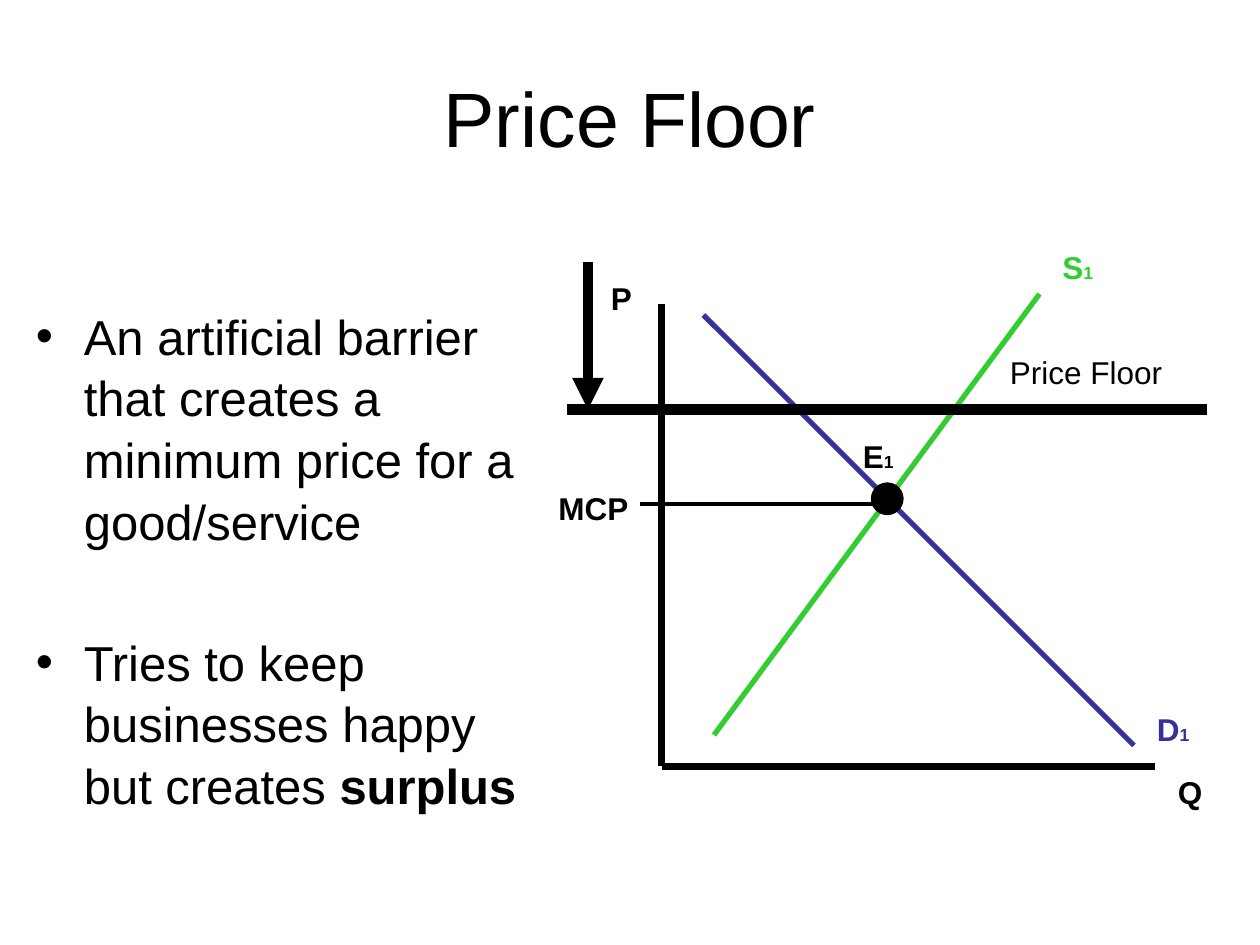
"""Build the price floor slide: two bullet points beside a supply and demand diagram."""
from dataclasses import dataclass

from lxml.etree import SubElement
from pptx import Presentation
from pptx.dml.color import RGBColor
from pptx.enum.shapes import MSO_CONNECTOR, MSO_SHAPE
from pptx.enum.text import MSO_ANCHOR, PP_ALIGN
from pptx.oxml.ns import qn
from pptx.util import Inches, Pt


@dataclass(frozen=True)
class Theme:
    font: str = "Arial"
    ink: RGBColor = RGBColor(0x00, 0x00, 0x00)
    demand: RGBColor = RGBColor(0x33, 0x33, 0x99)
    supply: RGBColor = RGBColor(0x33, 0xCC, 0x33)
    title: int = 44
    body: int = 28
    label: int = 18
    subscript: int = 10


theme = Theme()
deck = Presentation()
deck.slide_width, deck.slide_height = Inches(10), Inches(7.5)
slide = deck.slides.add_slide(deck.slide_layouts[6])
COLUMN, ROW = deck.slide_width / 120, deck.slide_height / 90


def place(left, top, width, height):
    return [round(n * unit) for n, unit in zip((left, top, width, height), (COLUMN, ROW) * 2)]


def style(paragraph, size, color, bold=None):
    font = paragraph.font
    font.name, font.size, font.bold = theme.font, Pt(size), bold
    font.color.rgb = color


heading = slide.shapes.add_textbox(*place(6, 3.6, 108, 15)).text_frame
heading.word_wrap = True
heading.vertical_anchor = MSO_ANCHOR.MIDDLE
heading.text = "Price Floor"
heading.paragraphs[0].alignment = PP_ALIGN.CENTER
style(heading.paragraphs[0], theme.title, theme.ink)

points = [
    ("An artificial barrier that creates a minimum price for a good/service", "", 0),
    ("Tries to keep businesses happy but creates ", "surplus", 45),
]
body = slide.shapes.add_textbox(*place(2.25, 28.3, 51.25, 43.9)).text_frame
body.word_wrap = True
for index, (statement, emphasis, gap) in enumerate(points):
    point = body.add_paragraph() if index else body.paragraphs[0]
    point.add_run().text = statement
    if emphasis:
        stressed = point.add_run()
        stressed.text, stressed.font.bold = emphasis, True
    properties = point._p.get_or_add_pPr()
    properties.set("marL", str(Inches(0.38)))
    properties.set("indent", str(-Inches(0.38)))
    SubElement(properties, qn("a:buFont")).set("typeface", theme.font)
    SubElement(properties, qn("a:buChar")).set("char", "•")
    point.line_spacing = 1.05
    point.space_before = Pt(gap)
    style(point, theme.body, theme.ink)

diagram_lines = [
    ((63, 29), (63, 73), theme.ink, 4.5, False),
    ((110, 73), (63, 73), theme.ink, 4.5, False),
    ((67, 30), (108, 71), theme.demand, 3, False),
    ((68, 70), (99, 28), theme.supply, 3, False),
    ((61, 48), (84, 48), theme.ink, 2.25, False),
    ((54, 39), (115, 39), theme.ink, 6, False),
    ((56, 25), (56, 39), theme.ink, 6, True),
]
for start, end, color, weight, has_arrow in diagram_lines:
    stroke = slide.shapes.add_connector(MSO_CONNECTOR.STRAIGHT, *place(*start, *end))
    stroke.line.color.rgb, stroke.line.width = color, Pt(weight)
    if has_arrow:
        SubElement(stroke.line._get_or_add_ln(), qn("a:tailEnd")).set("type", "triangle")
    SubElement(stroke._element.spPr, qn("a:effectLst"))

equilibrium = slide.shapes.add_shape(MSO_SHAPE.OVAL, *place(83, 46, 3, 3))
equilibrium.shadow.inherit = False
equilibrium.fill.solid()
equilibrium.fill.fore_color.rgb = theme.ink
equilibrium.line.color.rgb, equilibrium.line.width = theme.ink, Pt(0.75)

diagram_labels = [
    ("P", "", 57, 26, 5, theme.ink, True),
    ("Q", "", 111, 73, 5, theme.ink, True),
    ("D", "1", 109, 67, 7, theme.demand, True),
    ("S", "1", 100, 23, 7, theme.supply, True),
    ("MCP", "", 52, 46, 11, theme.ink, True),
    ("E", "1", 81, 41, 7, theme.ink, True),
    ("Price Floor", "", 95, 33, 20, theme.ink, False),
]
for name, number, left, top, width, color, bold in diagram_labels:
    label = slide.shapes.add_textbox(*place(left, top, width, 4.8)).text_frame
    label.word_wrap = True
    caption = label.paragraphs[0]
    caption.add_run().text = name
    if number:
        subscript = caption.add_run()
        subscript.text, subscript.font.size = number, Pt(theme.subscript)
    style(caption, theme.label, color, bold)

deck.save("out.pptx")
